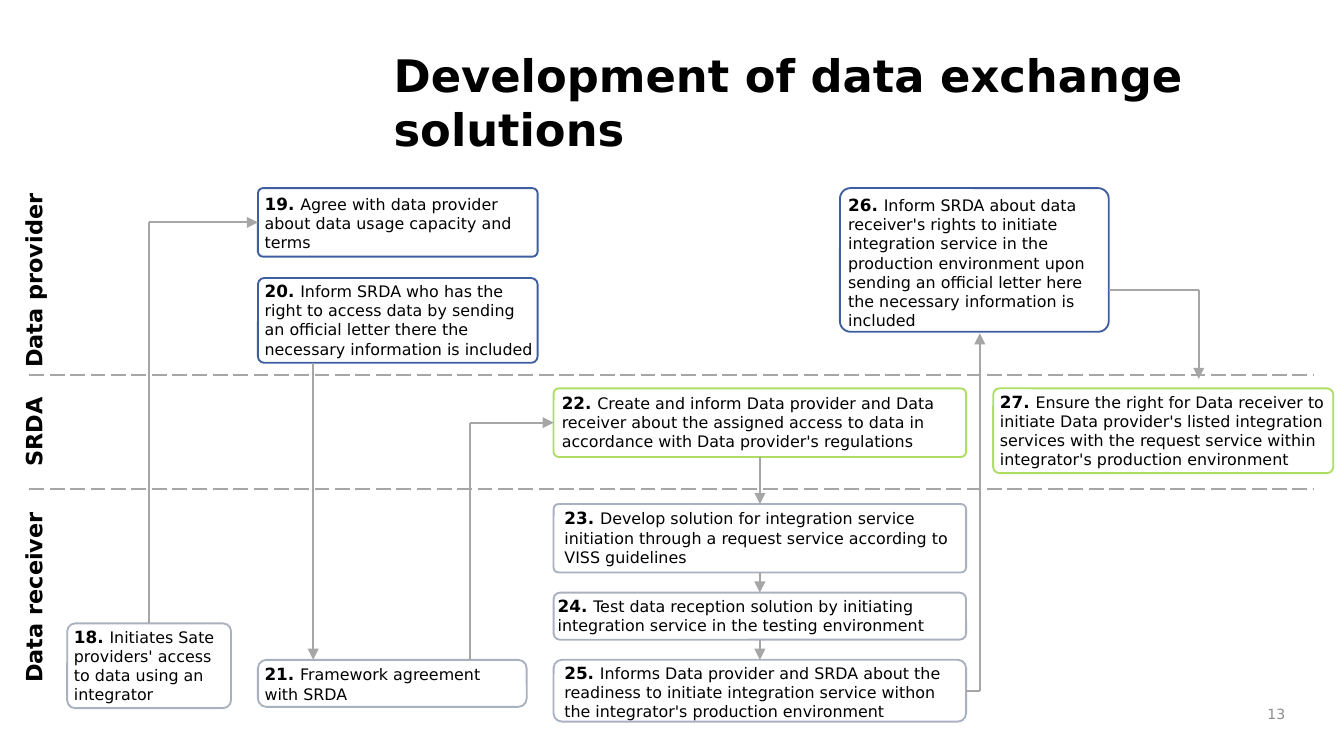
from dataclasses import dataclass

from lxml import etree
from pptx import Presentation
from pptx.dml.color import RGBColor
from pptx.enum.dml import MSO_LINE
from pptx.enum.shapes import MSO_CONNECTOR, MSO_SHAPE
from pptx.enum.text import MSO_ANCHOR, PP_ALIGN
from pptx.oxml.ns import qn
from pptx.util import Pt

ROUNDED = MSO_SHAPE.ROUNDED_RECTANGLE
STRAIGHT = MSO_CONNECTOR.STRAIGHT
LONG_DASH = MSO_LINE.LONG_DASH
TOP_ANCHOR, MIDDLE = MSO_ANCHOR.TOP, MSO_ANCHOR.MIDDLE
LEFT_ALIGN, CENTER, RIGHT_ALIGN = PP_ALIGN.LEFT, PP_ALIGN.CENTER, PP_ALIGN.RIGHT
TOP, LEFT, BOTTOM, RIGHT = range(4)
CORNER_INSET = 0.29  # share of the corner radius that a rounded box adds to its insets


@dataclass(frozen=True)
class Theme:
    font: str = "DejaVu Sans"
    text: str = "000000"
    muted: str = "8C8C8C"
    fill: str = "FFFFFF"
    line: str = "A6A6A6"
    provider: str = "3E5E9F"
    srda: str = "ADDE61"
    receiver: str = "A9B1C1"
    title_size: float = 24
    lane_size: float = 12
    number_size: float = 9
    step_size: float = 8.5
    page_size: float = 7.5


THEME = Theme()

TITLE = "Development of data exchange solutions"
PAGE_NUMBER = "13"

# name, top, height
LANES = [
    ("Data provider", 102.2, 96.5),
    ("SRDA", 203, 56.9),
    ("Data receiver", 266.4, 107.3),
]
LANE_DIVIDERS = [200.9, 262.1]

# number: text, lane colour, (left, top, width, height), corner, (left, top, right) insets
STEPS = {
    18: ("Initiates Sate providers' access to data using an integrator",
         THEME.receiver, (36, 334, 87.8, 45.4), 0.094, (3.6, 1.5, 0)),
    19: ("Agree with data provider about data usage capacity and terms",
         THEME.provider, (138.2, 100.8, 149.8, 36.7), 0.074, (3.6, 2.9, 10)),
    20: ("Inform SRDA who has the right to access data by sending an official letter "
         "there the necessary information is included",
         THEME.provider, (138.2, 149, 149.8, 45.4), 0.074, (3.6, 1.5, 0)),
    21: ("Framework agreement with SRDA",
         THEME.receiver, (138.2, 353.5, 144, 25.2), 0.18, (3.6, 2.2, 4.4)),
    22: ("Create and inform Data provider and Data receiver about the assigned access "
         "to data in accordance with Data provider's regulations",
         THEME.srda, (296.6, 208.1, 221, 36.7), 0.074, (4.4, 2.2, 6.4)),
    23: ("Develop solution for integration service initiation through a request "
         "service according to VISS guidelines",
         THEME.receiver, (296.6, 270, 221, 36.7), 0.074, (5.8, 2.2, 6.4)),
    24: ("Test data reception solution by initiating integration service in the "
         "testing environment",
         THEME.receiver, (296.6, 317.5, 221, 25.2), 0.134, (2.2, 1.5, 0)),
    25: ("Informs Data provider and SRDA about the readiness to initiate integration "
         "service withon the integrator's production environment",
         THEME.receiver, (296.6, 353.5, 221, 33.1), 0.134, (5.8, 1.5, 2)),
    26: ("Inform SRDA about data receiver's rights to initiate integration service in "
         "the production environment upon sending an official letter here the "
         "necessary information is included",
         THEME.provider, (450, 100.8, 144, 77), 0.074, (4.4, 3.6, 3.7)),
    27: ("Ensure the right for Data receiver to initiate Data provider's listed "
         "integration services with the request service within integrator's "
         "production environment",
         THEME.srda, (532.1, 208.1, 182.2, 45.4), 0.074, (3.6, 1.5, 0)),
}

# Each route is a list of points; a (step, side) pair is the middle of that side.
ROUTES = [
    [(18, TOP), (79.9, 119.15), (19, LEFT)],
    [(167.8, 194.4), (167.8, 353.5)],
    [(252, 353.5), (252, 226.45), (22, LEFT)],
    [(22, BOTTOM), (23, TOP)],
    [(23, BOTTOM), (24, TOP)],
    [(24, BOTTOM), (25, TOP)],
    [(25, RIGHT), (524.9, 370.05), (524.9, 178.6)],
    [(594, 155.2), (642.2, 155.2), (642.2, 203)],
]


def add_run(paragraph, text, size, color=THEME.text, bold=False):
    run = paragraph.add_run()
    run.text = text
    run.font.name = THEME.font
    run.font.size = Pt(size)
    run.font.bold = bold
    run.font.color.rgb = RGBColor.from_string(color)


def set_insets(frame, *insets):
    frame.margin_left, frame.margin_top, frame.margin_right, frame.margin_bottom = map(Pt, insets)


def add_label(slide, text, bounds, size, align, color=THEME.text, bold=True):
    frame = slide.shapes.add_textbox(*map(Pt, bounds)).text_frame
    frame.word_wrap = True
    frame.vertical_anchor = MIDDLE
    paragraph = frame.paragraphs[0]
    paragraph.alignment = align
    add_run(paragraph, text, size, color, bold)
    return frame


def add_lane_name(slide, name, top, height):
    frame = add_label(slide, name, (10.8, top, 14.4, height), THEME.lane_size, CENTER)
    frame.word_wrap = False
    frame.vertical_anchor = TOP_ANCHOR
    set_insets(frame, 0, 0, 0, 0)
    frame._txBody.find(qn("a:bodyPr")).set("vert", "vert270")


def add_step(slide, number, text, color, bounds, corner, insets):
    shape = slide.shapes.add_shape(ROUNDED, *map(Pt, bounds))
    shape.adjustments[0] = corner
    shape.shadow.inherit = False
    shape.fill.solid()
    shape.fill.fore_color.rgb = RGBColor.from_string(THEME.fill)
    shape.line.color.rgb = RGBColor.from_string(color)
    shape.line.width = Pt(1)
    frame = shape.text_frame
    frame.word_wrap = True
    frame.vertical_anchor = TOP_ANCHOR
    built_in = CORNER_INSET * corner * min(bounds[2:])
    set_insets(frame, *(round(max(0, inset - built_in), 2) for inset in insets), 0)
    paragraph = frame.paragraphs[0]
    paragraph.alignment = LEFT_ALIGN
    add_run(paragraph, f"{number}. ", THEME.number_size, bold=True)
    add_run(paragraph, text, THEME.step_size)
    return shape


def add_line(slide, start, end, arrow=False, dash=None):
    line = slide.shapes.add_connector(STRAIGHT, *map(Pt, (*start, *end)))
    line.line.color.rgb = RGBColor.from_string(THEME.line)
    line.line.width = Pt(1)
    if dash:
        line.line.dash_style = dash
    if arrow:
        etree.SubElement(line.line._get_or_add_ln(), qn("a:tailEnd"), type="triangle")
    etree.SubElement(line._element.spPr, qn("a:effectLst"))
    return line


def locate(point):
    """Return the coordinates of a point or of the middle of a step's side."""
    if point[0] not in STEPS:
        return point
    left, top, width, height = STEPS[point[0]][2]
    across, down = {TOP: (0.5, 0), LEFT: (0, 0.5), BOTTOM: (0.5, 1), RIGHT: (1, 0.5)}[point[1]]
    return left + across * width, top + down * height


def add_route(slide, points, boxes):
    for start, end in zip(points, points[1:]):
        line = add_line(slide, locate(start), locate(end), arrow=end is points[-1])
        if start[0] in boxes:
            line.begin_connect(boxes[start[0]], start[1])
        if end[0] in boxes:
            line.end_connect(boxes[end[0]], end[1])


def main():
    presentation = Presentation()
    presentation.slide_width, presentation.slide_height = Pt(720), Pt(405)
    slide = presentation.slides.add_slide(presentation.slide_layouts[6])
    add_label(slide, TITLE, (203.8, 22.3, 480.2, 64), THEME.title_size, LEFT_ALIGN)
    for lane in LANES:
        add_lane_name(slide, *lane)
    for y in LANE_DIVIDERS:
        add_line(slide, (15.8, y), (704.2, y), dash=LONG_DASH)
    boxes = {number: add_step(slide, number, *step) for number, step in STEPS.items()}
    for route in ROUTES:
        add_route(slide, route, boxes)
    add_label(slide, PAGE_NUMBER, (671.8, 373.7, 23.8, 18), THEME.page_size, RIGHT_ALIGN,
              THEME.muted, bold=False)
    presentation.save("out.pptx")


if __name__ == "__main__":
    main()
